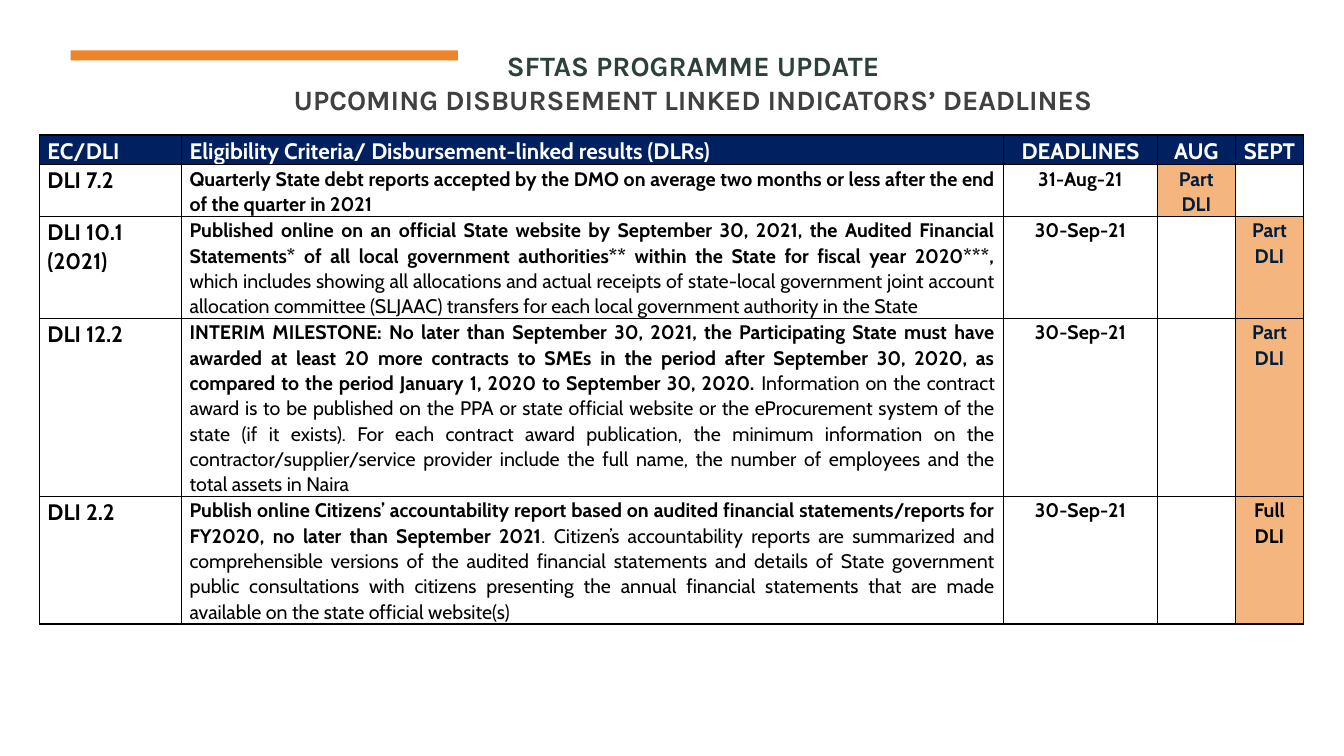
"""Build the slide of upcoming disbursement linked indicator deadlines."""
from dataclasses import dataclass

from lxml.etree import SubElement
from pptx import Presentation
from pptx.dml.color import RGBColor
from pptx.enum.shapes import MSO_SHAPE
from pptx.enum.text import MSO_ANCHOR, MSO_AUTO_SIZE, PP_ALIGN
from pptx.oxml.ns import qn
from pptx.util import Inches, Pt

TITLE = ["SFTAS PROGRAMME UPDATE", "UPCOMING DISBURSEMENT LINKED INDICATORS’ DEADLINES"]
HEADERS = ["EC/DLI", "Eligibility Criteria/ Disbursement-linked results (DLRs)", "DEADLINES", "AUG", "SEPT"]
INDICATORS = [
    ("DLI 7.2",
     ("Quarterly State debt reports accepted by the DMO on average two months or less after the end "
      "of the quarter in 2021 ", ""),
     "31-Aug-21", "Part DLI", ""),
    ("DLI 10.1 (2021)",
     ("Published online on an official State website by September 30, 2021, the Audited Financial "
      "Statements* of all local government authorities** within the State for fiscal year 2020***, ",
      "which includes showing all allocations and actual receipts of state-local government joint account "
      "allocation committee (SLJAAC) transfers for each local government authority in the State"),
     "30-Sep-21", "", "Part DLI"),
    ("DLI 12.2",
     ("INTERIM MILESTONE: No later than September 30, 2021, the Participating State must have "
      "awarded at least 20 more contracts to SMEs in the period after September 30, 2020, as "
      "compared to the period January 1, 2020 to September 30, 2020. ",
      "Information on the contract award is to be published on the PPA or state official website or the "
      "eProcurement system of the state (if it exists). For each contract award publication, the minimum "
      "information on the contractor/supplier/service provider include the full name, the number of "
      "employees and the total assets in Naira"),
     "30-Sep-21", "", "Part DLI"),
    ("DLI 2.2",
     ("Publish online Citizens’ accountability report based on audited financial statements/reports for "
      "FY2020, no later than September 2021",
      ". Citizen’s accountability reports are summarized and comprehensible versions of the audited "
      "financial statements and details of State government public consultations with citizens presenting "
      "the annual financial statements that are made available on the state official website(s) "),
     "30-Sep-21", "", "Full DLI"),
]

# Shares are percentages of the slide's width or height.
TITLE_BOX = (8.33, 1.87, 86.5, 14.13)
BAR_BOX = (5.25, 6.67, 28.81, 1.33)
TABLE_CORNER = (2.93, 17.87)
COLUMNS = [10.58, 61.14, 11.48, 5.78, 5.1]
ROWS = [3.87, 6.8, 13.47, 23.5, 16.8]
ALIGNS = [PP_ALIGN.LEFT, PP_ALIGN.JUSTIFY] + [PP_ALIGN.CENTER] * 3


@dataclass(frozen=True)
class Theme:
    """Fonts, type sizes and colours of the slide."""
    title_font: str = "Karla"
    table_font: str = "Cabin"
    title_size: int = 20
    label_size: int = 16
    text_size: int = 14
    title_colors: tuple = ("2D4039", "404040")
    bar: str = "ED8428"
    header: str = "002060"
    mark: str = "F4B57E"
    navy: str = "001D3A"
    white: str = "FFFFFF"
    black: str = "000000"


THEME = Theme()


def rgb(value):
    """Return a colour from its hex digits."""
    return RGBColor.from_string(value)


def place(prs, box):
    """Turn percentage shares into slide lengths."""
    sides = (prs.slide_width, prs.slide_height) * 2
    return [int(side * share / 100) for side, share in zip(sides, box)]


def add_title(prs, s):
    """Fill the title placeholder with two coloured lines."""
    sp = s.shapes.title
    sp.left, sp.top, sp.width, sp.height = place(prs, TITLE_BOX)
    tf = sp.text_frame
    tf.auto_size = MSO_AUTO_SIZE.NONE
    tf.vertical_anchor = MSO_ANCHOR.BOTTOM
    p = tf.paragraphs[0]
    p.alignment = PP_ALIGN.CENTER
    for i, (line, color) in enumerate(zip(TITLE, THEME.title_colors)):
        if i:
            p.add_line_break()
        r = p.add_run()
        r.text = line
        r.font.name, r.font.size, r.font.bold = THEME.title_font, Pt(THEME.title_size), True
        r.font.color.rgb = rgb(color)


def add_bar(prs, s):
    """Draw the accent bar."""
    sp = s.shapes.add_shape(MSO_SHAPE.RECTANGLE, *place(prs, BAR_BOX))
    sp.shadow.inherit = False
    sp.fill.solid()
    sp.fill.fore_color.rgb = rgb(THEME.bar)
    sp.line.fill.background()


def add_borders(cell):
    """Give a cell thin black borders on all sides."""
    tc_pr = cell._tc.get_or_add_tcPr()
    for side in ("a:lnL", "a:lnR", "a:lnT", "a:lnB"):
        ln = SubElement(tc_pr, qn(side), w=str(Pt(1)))
        SubElement(SubElement(ln, qn("a:solidFill")), qn("a:srgbClr"), val=THEME.black)


def fill_cell(cell, runs, align, size, color, fill):
    """Write a bold run and an optional regular run into a bordered cell."""
    add_borders(cell)
    cell.margin_left = cell.margin_right = Inches(0.08)
    cell.margin_top, cell.margin_bottom = Inches(0.01), 0
    if fill:
        cell.fill.solid()
        cell.fill.fore_color.rgb = rgb(fill)
    else:
        cell.fill.background()
    p = cell.text_frame.paragraphs[0]
    p.alignment, p.line_spacing, p.space_after = align, 1.06, Pt(8)
    p.font.name, p.font.size = THEME.table_font, Pt(size)
    p.font.color.rgb = rgb(color)
    for text, bold in zip(runs, (True, False)):
        if text:
            r = p.add_run()
            r.text, r.font.bold = text, bold


def add_deadlines(prs, s):
    """Build the table of indicators and their deadlines."""
    box = place(prs, TABLE_CORNER + (sum(COLUMNS), sum(ROWS)))
    table = s.shapes.add_table(len(ROWS), len(COLUMNS), *box).table
    table.first_row = table.horz_banding = False
    for column, share in zip(table.columns, COLUMNS):
        column.width = int(prs.slide_width * share / 100)
    for row, share in zip(table.rows, ROWS):
        row.height = int(prs.slide_height * share / 100)
    for j, (text, align) in enumerate(zip(HEADERS, ALIGNS)):
        header_align = PP_ALIGN.LEFT if j == 1 else align
        fill_cell(table.cell(0, j), [text], header_align, THEME.label_size, THEME.white, THEME.header)
    for i, indicator in enumerate(INDICATORS, 1):
        for j, (content, align) in enumerate(zip(indicator, ALIGNS)):
            runs = content if j == 1 else [content]
            size = THEME.text_size if j else THEME.label_size
            color = THEME.navy if content == "Part DLI" else THEME.black
            fill = THEME.mark if j > 2 and content else None
            fill_cell(table.cell(i, j), runs, align, size, color, fill)


def main():
    """Assemble and save the slide."""
    prs = Presentation()
    prs.slide_width, prs.slide_height = Inches(13.33), Inches(7.5)
    s = prs.slides.add_slide(prs.slide_layouts[5])
    add_title(prs, s)
    add_bar(prs, s)
    add_deadlines(prs, s)
    prs.save("out.pptx")


if __name__ == "__main__":
    main()
